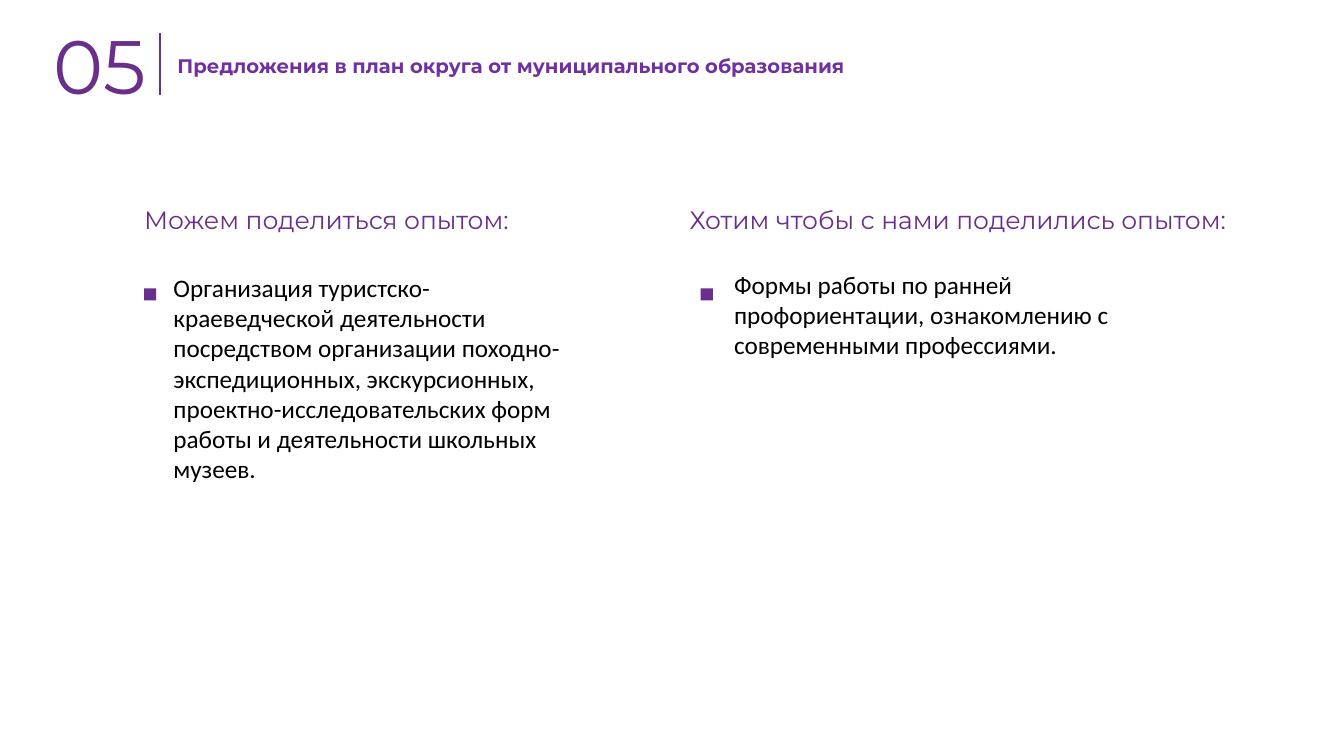
from dataclasses import dataclass

import pptx
import pptx.dml.color
import pptx.enum.shapes
import pptx.enum.text
import pptx.oxml
import pptx.oxml.ns
import pptx.slide
import pptx.util
from pptx.util import Inches


@dataclass(frozen=True)
class Theme:
    purple: str = "682F8D"
    title_purple: str = "7030A0"
    black: str = "000000"
    heading_font: str = "Montserrat"
    body_font: str = "Calibri"
    number_size: float = 54
    title_size: float = 14
    heading_size: float = 17.9
    body_size: float = 18
    rule_width: float = 1.42


@dataclass(frozen=True)
class Box:
    left: float
    top: float
    width: float
    height: float


@dataclass(frozen=True)
class Topic:
    heading: str
    heading_box: Box
    heading_idx: int
    proposal: str
    proposal_box: Box
    proposal_idx: int
    marker_left: float


THEME = Theme()
MARKER_TOP, MARKER_SIDE = 2.86, 0.12

TOPICS = [
    Topic(
        "Можем поделиться опытом:", Box(1.43, 2.02, 4.12, 0.31), 1,
        "Организация туристско-краеведческой деятельности посредством "
        "организации походно-экспедиционных, экскурсионных, "
        "проектно-исследовательских форм работы и деятельности школьных музеев.",
        Box(1.62, 2.65, 4.12, 2.22), 2, 1.43,
    ),
    Topic(
        "Хотим чтобы с нами поделились опытом:", Box(6.84, 2.02, 5.89, 0.31), 3,
        "Формы работы по ранней профориентации, ознакомлению с "
        "современными профессиями.",
        Box(7.18, 2.62, 4.54, 1.01), 4, 6.95,
    ),
]


def rgb(value: str) -> pptx.dml.color.RGBColor:
    return pptx.dml.color.RGBColor.from_string(value)


def write_text(shape, text: str, box: Box, *, size: float, color: str = THEME.purple,
               font: str = THEME.heading_font, bold: bool = False,
               inset_x: float = 0, inset_y: tuple[float, float] = (0.01, 0)) -> None:
    """Place a text box or placeholder and fill it with one unbulleted paragraph."""
    shape.left, shape.top = Inches(box.left), Inches(box.top)
    shape.width, shape.height = Inches(box.width), Inches(box.height)
    frame = shape.text_frame
    frame.word_wrap = True
    frame.auto_size = pptx.enum.text.MSO_AUTO_SIZE.NONE
    frame.vertical_anchor = pptx.enum.text.MSO_ANCHOR.TOP
    frame.margin_left = frame.margin_right = Inches(inset_x)
    frame.margin_top, frame.margin_bottom = map(Inches, inset_y)

    paragraph = frame.paragraphs[0]
    properties = paragraph._p.get_or_add_pPr()
    properties.set("marL", "0")
    properties.set("indent", "0")
    properties.append(pptx.oxml.parse_xml(
        f'<a:buNone {pptx.oxml.ns.nsdecls("a")}/>'))
    paragraph.alignment = pptx.enum.text.PP_ALIGN.LEFT
    paragraph.space_before = pptx.util.Pt(0)
    run = paragraph.add_run()
    run.text = text
    run.font.name = font
    run.font.size = pptx.util.Pt(size)
    run.font.bold = bold
    run.font.color.rgb = rgb(color)


def draw_header(slide: pptx.slide.Slide) -> None:
    number_box = Box(0.53, 0.18, 1.03, 0.92)
    number = slide.shapes.add_textbox(0, 0, 0, 0)
    write_text(number, "05", number_box, size=THEME.number_size)

    divider = slide.shapes.add_connector(
        pptx.enum.shapes.MSO_CONNECTOR.STRAIGHT,
        Inches(1.59), Inches(0.33), Inches(1.59), Inches(0.94))
    divider.line.color.rgb = rgb(THEME.purple)
    divider.line.width = pptx.util.Pt(THEME.rule_width)
    divider._element.spPr.append(pptx.oxml.parse_xml(
        f'<a:effectLst {pptx.oxml.ns.nsdecls("a")}/>'))

    write_text(slide.shapes.title,
               "Предложения в план округа от муниципального образования",
               Box(1.76, 0.52, 8.67, 0.24),
               size=THEME.title_size, color=THEME.title_purple, bold=True)


def draw_topic(slide: pptx.slide.Slide, topic: Topic) -> None:
    placeholders = {item.placeholder_format.idx: item for item in slide.placeholders}
    write_text(placeholders[topic.heading_idx], topic.heading, topic.heading_box,
               size=THEME.heading_size)
    write_text(placeholders[topic.proposal_idx], topic.proposal, topic.proposal_box,
               size=THEME.body_size, color=THEME.black, font=THEME.body_font,
               inset_x=0.1, inset_y=(0.05, 0.05))

    marker = slide.shapes.add_shape(
        pptx.enum.shapes.MSO_SHAPE.RECTANGLE, Inches(topic.marker_left),
        Inches(MARKER_TOP), Inches(MARKER_SIDE), Inches(MARKER_SIDE))
    marker.shadow.inherit = False
    marker.fill.solid()
    marker.fill.fore_color.rgb = rgb(THEME.purple)
    marker.line.fill.background()


def main() -> None:
    presentation = pptx.Presentation()
    presentation.slide_width = Inches(13.33)
    presentation.slide_height = Inches(7.5)
    comparison_layout = presentation.slide_layouts[4]
    slide = presentation.slides.add_slide(comparison_layout)
    draw_header(slide)
    for topic in TOPICS:
        draw_topic(slide, topic)
    presentation.save("out.pptx")


if __name__ == "__main__":
    main()
